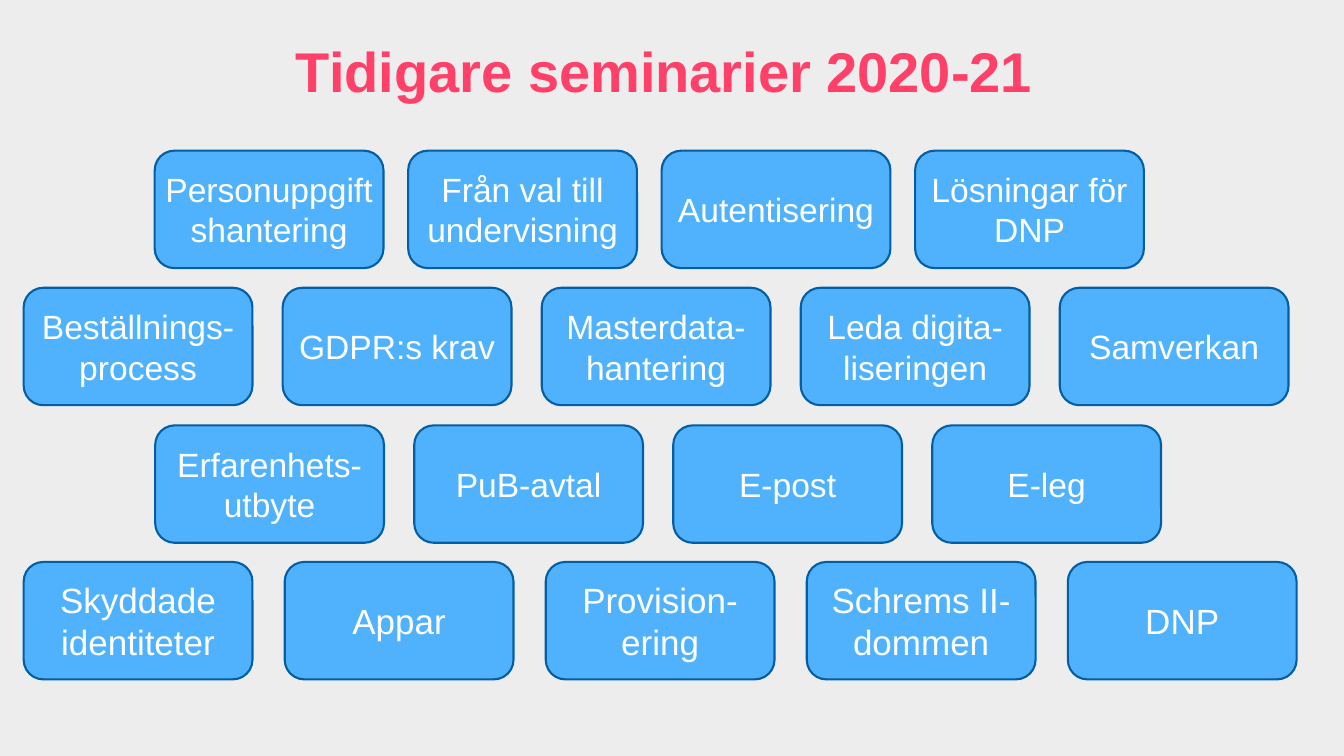
from pptx import Presentation
from pptx.dml.color import RGBColor
from pptx.enum.shapes import MSO_SHAPE
from pptx.enum.text import MSO_ANCHOR, PP_ALIGN
from pptx.util import Pt

PX = 9144
COLORS = {"back": "EDEDED", "title": "FF4069", "card": "50B2FC",
          "edge": "035EA3", "text": "FFFFFF"}
CARD = (454, 233)
ROWS = [
    (307, 299, 503, 48, ["Personuppgiftshantering", "Från val till undervisning",
                         "Autentisering", "Lösningar för DNP"]),
    (47, 571, 514, 48, ["Beställnings-process", "GDPR:s krav", "Masterdata-hantering",
                        "Leda digita-liseringen", "Samverkan"]),
    (308, 844, 514, 48, ["Erfarenhets-utbyte", "PuB-avtal", "E-post", "E-leg"]),
    (47, 1115, 518, 50, ["Skyddade identiteter", "Appar", "Provision-ering",
                         "Schrems II-dommen", "DNP"]),
]


def color(name):
    """Return the named colour."""
    return RGBColor.from_string(COLORS[name])


def scale(*box):
    """Turn px lengths into EMU."""
    return [n * PX for n in box]


def write(shape, text, size, tone, bold=False):
    """Centre one paragraph of text in a shape."""
    frame = shape.text_frame
    frame.word_wrap = True
    frame.vertical_anchor = MSO_ANCHOR.MIDDLE
    frame.text = text
    para = frame.paragraphs[0]
    para.alignment = PP_ALIGN.CENTER
    font = para.font
    font.name, font.size, font.bold = "Arial", Pt(size), bold
    font.color.rgb = color(tone)


def add_title(slide, box, text):
    """Place the heading in its box."""
    shape = slide.shapes.add_textbox(*scale(*box))
    frame = shape.text_frame
    frame.margin_left = frame.margin_right = 0
    frame.margin_top = frame.margin_bottom = 0
    write(shape, text, 80, "title", True)


def add_row(slide, left, top, step, size, names):
    """Place a row of equally spaced cards."""
    for i, name in enumerate(names):
        card = slide.shapes.add_shape(MSO_SHAPE.ROUNDED_RECTANGLE,
                                      *scale(left + i * step, top, *CARD))
        card.shadow.inherit = False
        card.fill.solid()
        card.fill.fore_color.rgb = color("card")
        card.line.color.rgb = color("edge")
        card.line.width = Pt(3)
        write(card, name, size, "text")


def main():
    """Build and save the slide."""
    deck = Presentation()
    deck.slide_width, deck.slide_height = scale(2667, 1500)
    slide = deck.slides.add_slide(deck.slide_layouts[6])
    fill = slide.background.fill
    fill.solid()
    fill.fore_color.rgb = color("back")
    add_title(slide, (20, 41, 2597, 196), "Tidigare seminarier 2020-21")
    for row in ROWS:
        add_row(slide, *row)
    deck.save("out.pptx")


if __name__ == "__main__":
    main()
